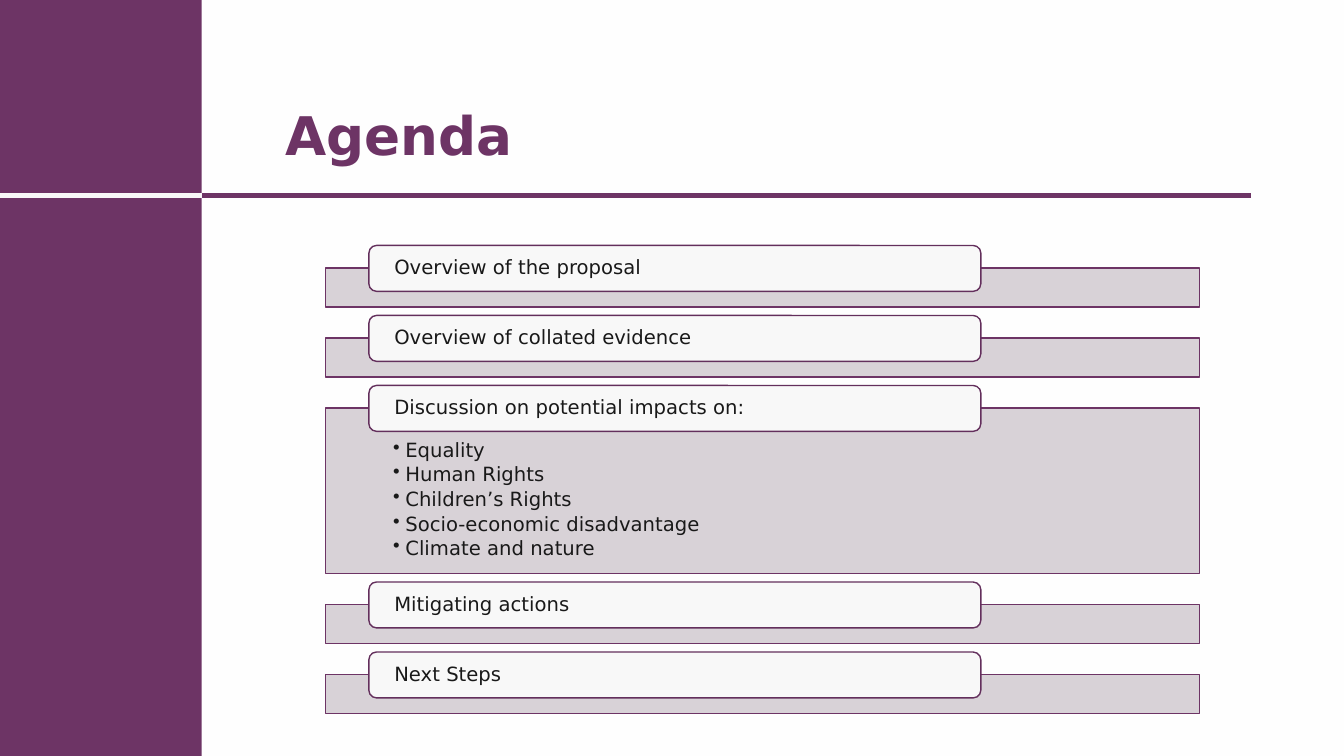
from dataclasses import dataclass

from lxml.etree import SubElement
from pptx import Presentation
from pptx.dml.color import RGBColor
from pptx.enum.shapes import MSO_CONNECTOR, MSO_SHAPE
from pptx.enum.text import MSO_ANCHOR, PP_ALIGN
from pptx.oxml.ns import qn
from pptx.util import Emu, Inches, Pt

FONT = "DejaVu Sans"
PLUM, PLUM_EDGE, MAUVE = "6D3465", "632F5C", "D4CED3"
PAPER, BACKDROP, INK = "F8F8F8", "FEFEFE", "191919"

prs = Presentation()
prs.slide_width, prs.slide_height = Inches(13.33), Inches(7.5)


@dataclass
class Section:
    heading: str
    points: tuple[str, ...] = ()
    height: float = 5.13  # rows


SECTIONS = [
    Section("Overview of the proposal"),
    Section("Overview of collated evidence"),
    Section("Discussion on potential impacts on:",
            ("Equality", "Human Rights", "Children’s Rights",
             "Socio-economic disadvantage", "Climate and nature"), 21.87),
    Section("Mitigating actions"),
    Section("Next Steps"),
]

# Grid of 100 columns by 100 rows
SIDEBAR_W, RULE_Y, RULE_END = 15, 25.87, 93.1
BAND_X, BAND_W, FIRST_BAND_Y, BAND_GAP = 24.23, 65.04, 35.47, 4.13
TAB_X, TAB_W, TAB_H, TAB_RISE = 27.45, 45.53, 6.07, 3


def col(n: float) -> Emu:
    return Emu(round(prs.slide_width * n / 100))


def row(n: float) -> Emu:
    return Emu(round(prs.slide_height * n / 100))


def color(value: str) -> RGBColor:
    return RGBColor.from_string(value)


def add_box(s, kind: MSO_SHAPE, x: float, y: float, w: float, h: float,
            fill: str, line: str | None = None):
    sp = s.shapes.add_shape(kind, col(x), row(y), col(w), row(h))
    sp.shadow.inherit = False
    sp.fill.solid()
    sp.fill.fore_color.rgb = color(fill)
    if line:
        sp.line.color.rgb = color(line)
        sp.line.width = Pt(1)
    else:
        sp.line.fill.background()
    return sp


def add_rule(s, x1: float, x2: float, line: str) -> None:
    cn = s.shapes.add_connector(MSO_CONNECTOR.STRAIGHT, col(x1), row(RULE_Y),
                                col(x2), row(RULE_Y))
    cn.line.color.rgb = color(line)
    cn.line.width = Pt(4)
    SubElement(cn._element.spPr, qn("a:effectLst"))


def set_text(sp, text: str, anchor: MSO_ANCHOR, insets: tuple[float, ...],
             size: int = 14, ink: str = INK, bold: bool = False,
             bullets: bool = False) -> None:
    tf = sp.text_frame
    tf.word_wrap = True
    tf.vertical_anchor = anchor
    tf.margin_left, tf.margin_top, tf.margin_right, tf.margin_bottom = map(Inches, insets)
    tf.text = text
    for p in tf.paragraphs:
        p.alignment = PP_ALIGN.LEFT
        p.line_spacing = 0.9
        if bullets:
            p.space_after = Pt(2.4)
            pPr = p._p.get_or_add_pPr()
            pPr.set("marL", str(Inches(0.12)))
            pPr.set("indent", str(Inches(-0.12)))
            SubElement(pPr, qn("a:buChar"), char="•")
        for r in p.runs:
            r.font.name, r.font.size, r.font.bold = FONT, Pt(size), bold
            r.font.color.rgb = color(ink)


def add_section(s, section: Section, y: float) -> None:
    band = add_box(s, MSO_SHAPE.RECTANGLE, BAND_X, y, BAND_W, section.height, MAUVE, PLUM)
    band_fill = band._element.spPr.find(qn("a:solidFill"))
    SubElement(band_fill[0], qn("a:alpha"), val="90000")
    if section.points:
        set_text(band, "\n".join(section.points), MSO_ANCHOR.TOP,
                 (0.67, 0.32, 0.67, 0.11), bullets=True)
    tab = add_box(s, MSO_SHAPE.ROUNDED_RECTANGLE, TAB_X, y - TAB_RISE, TAB_W, TAB_H,
                  PAPER, PLUM_EDGE)
    set_text(tab, section.heading, MSO_ANCHOR.MIDDLE, (0.23, 0, 0.23, 0))


def main() -> None:
    s = prs.slides.add_slide(prs.slide_layouts[6])
    s.background.fill.solid()
    s.background.fill.fore_color.rgb = color(BACKDROP)

    # Sidebar and rules
    add_box(s, MSO_SHAPE.RECTANGLE, 0, 0, SIDEBAR_W, 100, PLUM)
    add_rule(s, SIDEBAR_W, RULE_END, PLUM)
    add_rule(s, 0, SIDEBAR_W, PAPER)

    # Title
    title = s.shapes.add_textbox(col(20.48), row(4.93), col(72.39), row(17.87))
    set_text(title, "Agenda", MSO_ANCHOR.BOTTOM, (0.1, 0.05, 0.1, 0.05), 38, PLUM, True)

    # Agenda sections, stacked with equal gaps
    y = FIRST_BAND_Y
    for section in SECTIONS:
        add_section(s, section, y)
        y += section.height + BAND_GAP

    prs.save("out.pptx")


if __name__ == "__main__":
    main()
